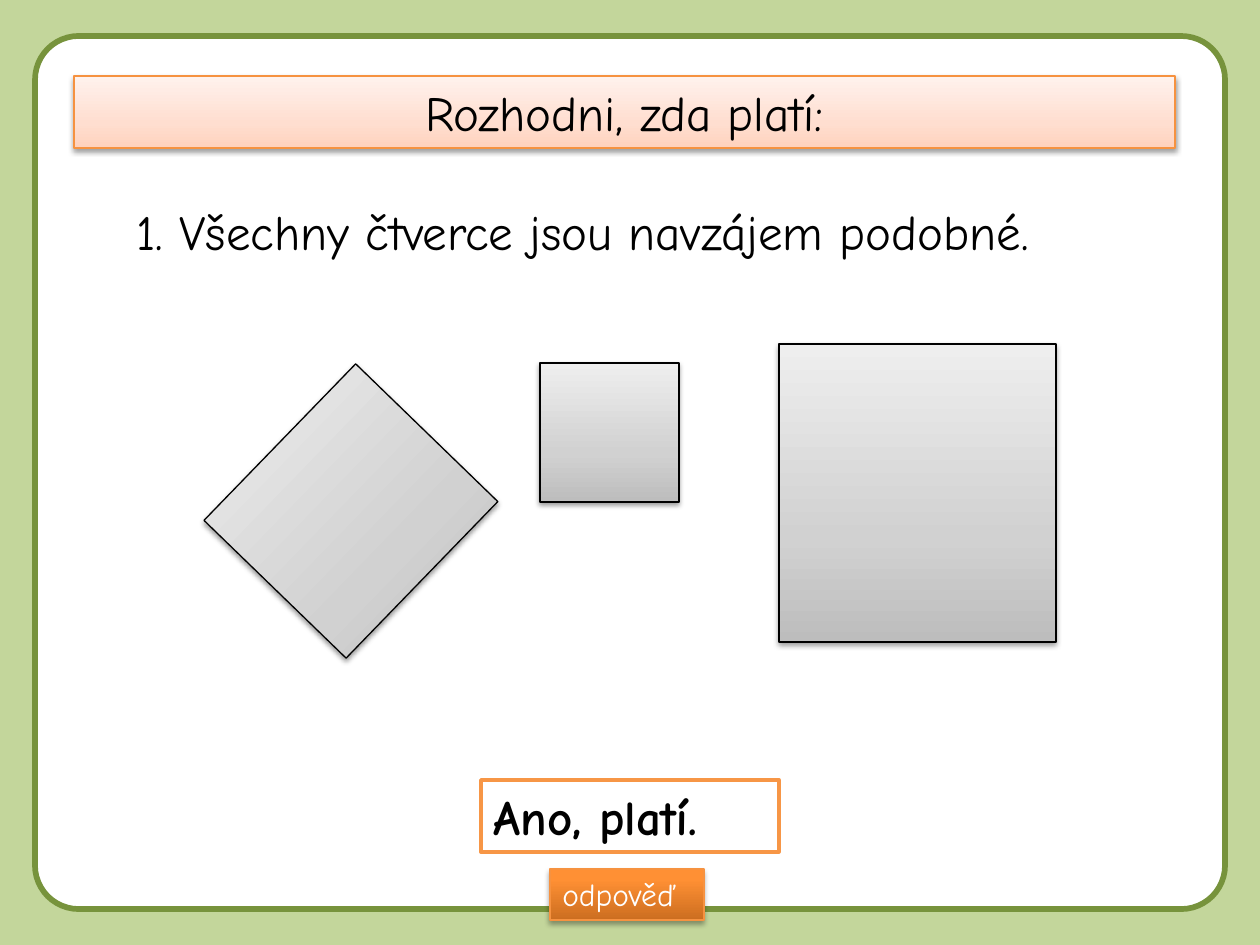
from lxml.etree import SubElement
from pptx import Presentation
from pptx.dml.color import RGBColor
from pptx.enum.shapes import MSO_SHAPE
from pptx.enum.text import MSO_ANCHOR, MSO_AUTO_SIZE, PP_ALIGN
from pptx.oxml.ns import qn
from pptx.util import Emu, Pt

GREY = [(0, "BDBDBD"), (35, "D1D1D1"), (100, "EEEEEE")]
PEACH = [(0, "FFD2BD"), (35, "FFDED0"), (100, "FFF2ED")]
ORANGE = [(0, "CC6E20"), (80, "FF9034"), (100, "FF9136")]


def px(length):
    return Emu(round(length * 914400 / 126))


def color(value):
    return RGBColor.from_string(value)


def add_color(parent, value):
    return SubElement(parent, qn("a:srgbClr"), val=value)


class SlideBuilder:
    font = "Comic Neue"

    def __init__(self, presentation, background):
        self.slide = presentation.slides.add_slide(presentation.slide_layouts[6])
        fill = self.slide.background.fill
        fill.solid()
        fill.fore_color.rgb = color(background)

    def box(self, place, fill, line, width=0.75, kind=MSO_SHAPE.RECTANGLE):
        shape = self.slide.shapes.add_shape(kind, *map(px, place))
        shape.shadow.inherit = False
        shape.fill.solid()
        shape.fill.fore_color.rgb = color(fill)
        shape.line.color.rgb = color(line)
        shape.line.width = Pt(width)
        return shape

    def raised_box(self, place, stops, line, rotation=0, distance=1.6, opacity=38):
        shape = self.box(place, stops[0][1], line)
        shape.rotation = rotation
        shape.fill.gradient()
        shape.fill.gradient_angle = 90
        properties = shape.element.spPr
        stop_list = properties.find(f"{qn('a:gradFill')}/{qn('a:gsLst')}")
        for stop in list(stop_list):
            stop_list.remove(stop)
        for position, value in stops:
            add_color(SubElement(stop_list, qn("a:gs"), pos=str(position * 1000)), value)
        shadow = SubElement(
            properties.find(qn("a:effectLst")), qn("a:outerShdw"),
            blurRad=str(Pt(3.1)), dist=str(Pt(distance)), dir="5400000", rotWithShape="0",
        )
        SubElement(add_color(shadow, "000000"), qn("a:alpha"), val=str(opacity * 1000))
        return shape

    def text_box(self, place):
        return self.slide.shapes.add_textbox(*map(px, place))

    def add_text(self, shape, text, value="000000", size=28, bold=False,
                 align=PP_ALIGN.LEFT, wrap=True, anchor=MSO_ANCHOR.TOP):
        frame = shape.text_frame
        frame_format = {
            "word_wrap": wrap,
            "auto_size": MSO_AUTO_SIZE.SHAPE_TO_FIT_TEXT,
            "vertical_anchor": anchor,
        }
        for name, setting in frame_format.items():
            setattr(frame, name, setting)
        paragraph = frame.paragraphs[0]
        paragraph.alignment = align
        run = paragraph.add_run()
        run.text = text
        for name, setting in {"name": self.font, "size": Pt(size), "bold": bold}.items():
            setattr(run.font, name, setting)
        run.font.color.rgb = color(value)


def main():
    presentation = Presentation()
    presentation.slide_width, presentation.slide_height = px(1260), px(945)
    builder = SlideBuilder(presentation, "C3D69B")

    frame = builder.box((35, 36, 1190, 873), "FFFFFF", "77933C", 3.25,
                        MSO_SHAPE.ROUNDED_RECTANGLE)
    frame.adjustments[0] = 0.05

    title = builder.raised_box((74, 76, 1101, 72), PEACH, "F69240")
    builder.add_text(title, "Rozhodni, zda platí:", align=PP_ALIGN.CENTER,
                     anchor=MSO_ANCHOR.MIDDLE)

    answer = builder.box((481, 780, 298, 72), "FFFFFF", "F79646", 2)
    builder.add_text(answer, "Ano, platí.", bold=True)

    button = builder.raised_box((550, 869, 154, 51), ORANGE, "F69240",
                                distance=1.8, opacity=35)
    builder.add_text(button, "odpověď", "FFFFFF", 18, wrap=False)

    statement = builder.text_box((124, 195, 1010, 72))
    builder.add_text(statement, "1. Všechny čtverce jsou navzájem podobné.", wrap=False)

    squares = [
        ((242, 412, 218, 198), 314.1),
        ((540, 363, 139, 139), 0),
        ((779, 344, 277, 298), 0),
    ]
    for place, rotation in squares:
        builder.raised_box(place, GREY, "000000", rotation)

    presentation.save("out.pptx")


if __name__ == "__main__":
    main()
